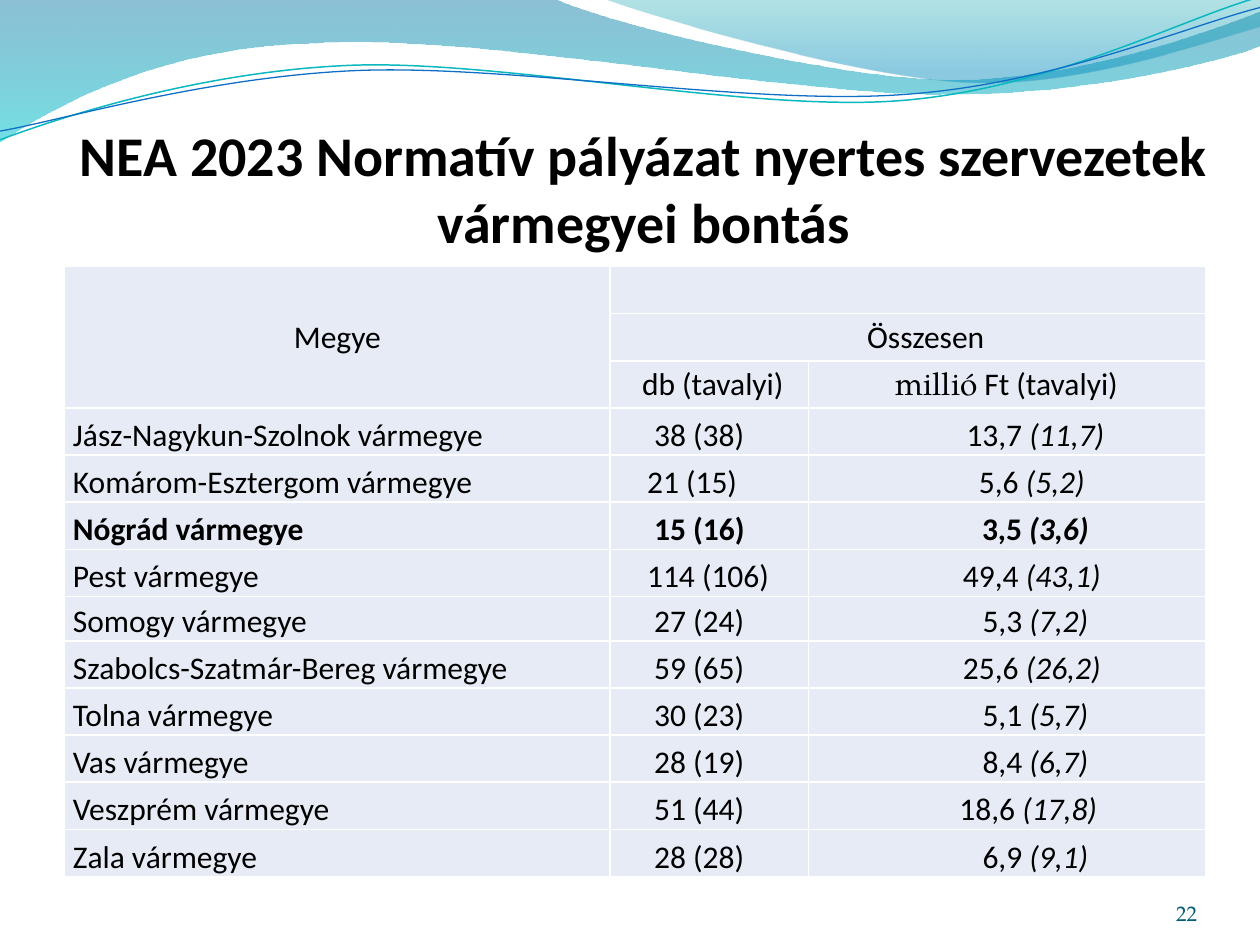
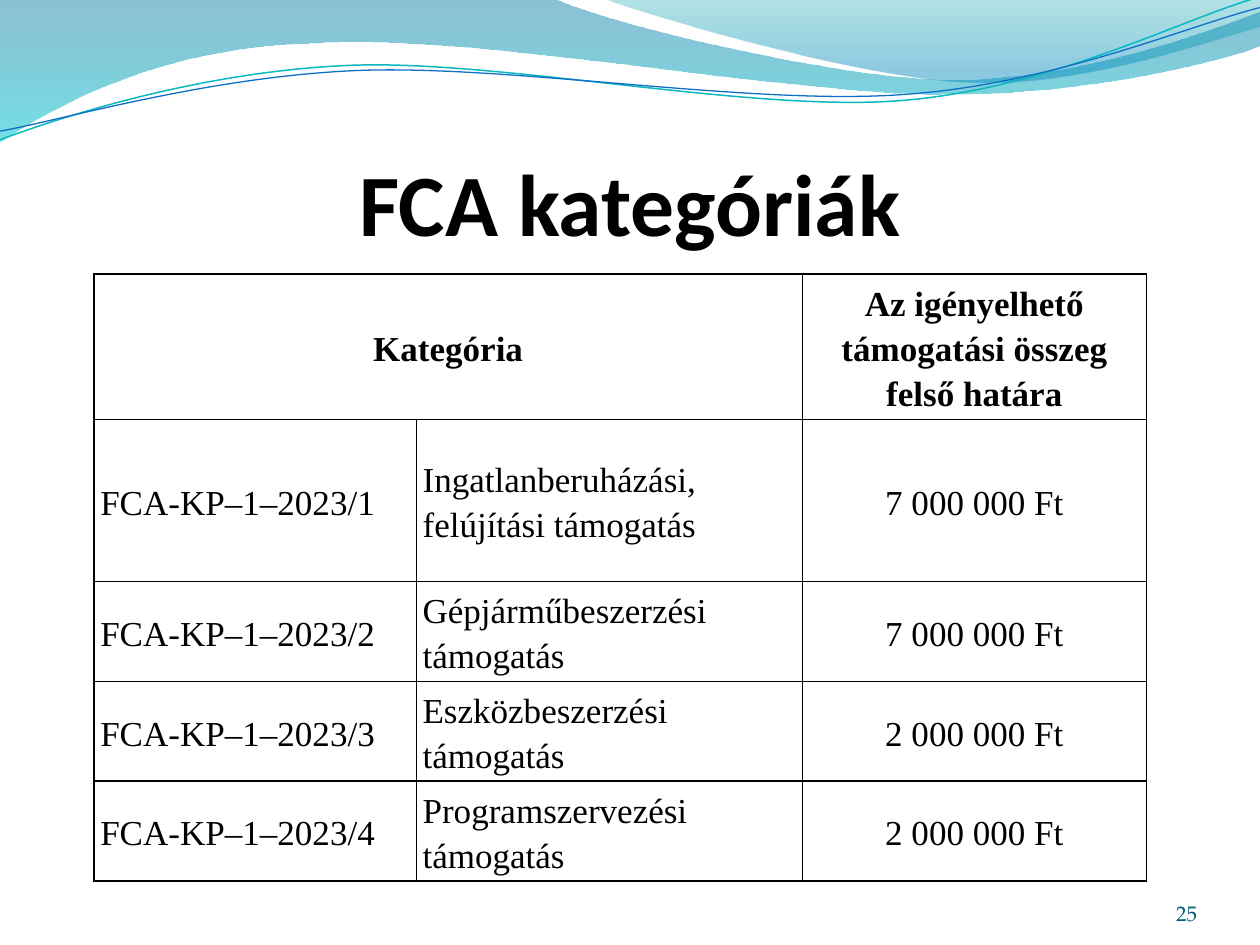
from dataclasses import dataclass

from lxml import etree
from pptx import Presentation
from pptx.dml.color import RGBColor
from pptx.enum.text import MSO_ANCHOR, MSO_AUTO_SIZE, PP_ALIGN
from pptx.oxml.ns import qn
from pptx.util import Pt

LEFT, CENTER, RIGHT = PP_ALIGN.LEFT, PP_ALIGN.CENTER, PP_ALIGN.RIGHT
MIDDLE, BOTTOM = MSO_ANCHOR.MIDDLE, MSO_ANCHOR.BOTTOM
NO_FIT = MSO_AUTO_SIZE.NONE
TITLE_ONLY = 5
SPACE = 4.07

COLORS = {
    "text": "000000",
    "number": "045D75",
    "cell": "E7EBF5",
    "white": "FFFFFF",
    "teal line": "0AB8BF",
    "blue line": "0F6FC6",
}
FONTS = {"sans": "Calibri", "serif": "Times New Roman", "number": "TeX Gyre Pagella"}

WAVES = [
    {
        "start": (0, 0),
        "segments": [
            [(316.8, -0.7)],
            [(342.7, 12.2), (478.1, 45.4), (545.8, 45.4)],
            [(614.2, 45.4), (689.8, 18.7), (720, 6.5)],
            [(720.7, 25.9)],
            [(708.5, 31.7), (626.4, 54.7), (537.1, 54)],
            [(447.8, 54), (275, 20.2), (185, 24.5)],
            [(92.2, 25.9), (33.1, 59.8), (-0.7, 81.4)],
        ],
        "stops": [(0, "0074A1", 45), (1, "00C6CF", 55)],
    },
    {
        "start": (344.9, -0.7),
        "segments": [
            [(366.5, 7.9), (491, 44.6), (553.7, 46.8)],
            [(616.3, 49.7), (691.9, 23), (720, 15.1)],
            [(720, 0)],
        ],
        "stops": [(0, "00A1A9", 30), (0.8, "008BBF", 45)],
    },
    {
        "start": (0, 79.9),
        "segments": [
            [(34.6, 67), (113.8, 41), (199.4, 37.4)],
            [(284.4, 33.8), (427, 64.1), (513.4, 57.6)],
            [(599.8, 51.1), (675.4, 10.8), (718.6, -1.4)],
        ],
        "line": ("teal line", 0.85),
    },
    {
        "start": (0, 74.9),
        "segments": [
            [(33.8, 69.1), (118.1, 43.9), (203.8, 40.3)],
            [(290.2, 36.7), (429.8, 60.5), (516.2, 54)],
            [(601.9, 48.2), (677.5, 15.1), (720, 4.3)],
        ],
        "line": ("blue line", 0.75),
    },
]

COUNTIES = [
    ("Jász-Nagykun-Szolnok", "38 (38)", 6, "13,7", "(11,7)", 8),
    ("Komárom-Esztergom", "21 (15)", 5, "5,6", "(5,2)", 7),
    ("Nógrád", "15 (16)", 6, "3,5", "(3,6)", 8),
    ("Pest", "114 (106)", 5, "49,4", "(43,1)", 7),
    ("Somogy", "27 (24)", 6, "5,3", "(7,2)", 8),
    ("Szabolcs-Szatmár-Bereg", "59 (65)", 6, "25,6", "(26,2)", 7),
    ("Tolna", "30 (23)", 6, "5,1", "(5,7)", 8),
    ("Vas", "28 (19)", 6, "8,4", "(6,7)", 8),
    ("Veszprém", "51 (44)", 6, "18,6", "(17,8)", 6),
    ("Zala", "28 (28)", 6, "6,9", "(9,1)", 8),
]
HOME_COUNTY = "Nógrád"

CATEGORIES = [
    ("Ingatlanberuházási, felújítási támogatás", "7 000 000 Ft"),
    ("Gépjárműbeszerzési támogatás", "7 000 000 Ft"),
    ("Eszközbeszerzési támogatás", "2 000 000 Ft"),
    ("Programszervezési támogatás", "2 000 000 Ft"),
]


def write(para, text, size=18, font="sans", color="text", bold=False, italic=False,
          align=LEFT, spacing=None):
    para.alignment = align
    if spacing:
        para.line_spacing = spacing
    span = para.add_run()
    span.text = text
    span.font.size = Pt(size)
    span.font.name = FONTS[font]
    span.font.bold = bold
    span.font.italic = italic
    span.font.color.rgb = RGBColor.from_string(COLORS[color])


def bend(shape, segments):
    corners = iter(list(shape.element.iter(qn("a:lnTo"))))
    for segment in segments:
        steps = [next(corners) for _ in segment]
        if len(steps) == 3:
            curve = etree.Element(qn("a:cubicBezTo"))
            steps[0].addprevious(curve)
            for step in steps:
                curve.append(step[0])
                step.getparent().remove(step)


def set_insets(target, left, top, right, bottom):
    target.margin_left, target.margin_top = Pt(left), Pt(top)
    target.margin_right, target.margin_bottom = Pt(right), Pt(bottom)


@dataclass
class DeckWriter:
    deck: object
    page: object = None

    def add_page(self, title, size, number, width=648):
        first = self.page is None
        self.page = self.deck.slides.add_slide(self.deck.slide_layouts[TITLE_ONLY])
        if first:
            for index, wave in enumerate(WAVES):
                shape = self.add_wave(**wave)
                shape.element.nvSpPr.cNvPr.set("id", str(101 + index))
                self.deck.slide_master.shapes.element.insert(2 + index, shape.element)
        self.add_title(title, size, width)
        self.add_number(number)

    def add_wave(self, start, segments, stops=None, line=None):
        builder = self.page.shapes.build_freeform(Pt(start[0]), Pt(start[1]))
        points = [(Pt(x), Pt(y)) for segment in segments for x, y in segment]
        builder.add_line_segments(points, close=bool(stops))
        shape = builder.convert_to_shape()
        bend(shape, segments)
        shape.shadow.inherit = False
        if line:
            color, width = line
            shape.fill.background()
            shape.line.color.rgb = RGBColor.from_string(COLORS[color])
            shape.line.width = Pt(width)
            return shape
        shape.line.fill.background()
        shape.fill.gradient()
        shape.fill.gradient_angle = 270
        for stop, (position, color, _) in zip(shape.fill.gradient_stops, stops):
            stop.position = position
            stop.color.rgb = RGBColor.from_string(color)
        tints = list(shape.element.iter(qn("a:srgbClr")))
        for tint, (_, _, opacity) in zip(tints, stops):
            etree.SubElement(tint, qn("a:alpha"), val=str(opacity * 1000))
        return shape

    def add_title(self, text, size, width):
        title = self.page.shapes.title
        title.left, title.top = Pt(36), Pt(55.44)
        title.width, title.height = Pt(width), Pt(90)
        frame = title.text_frame
        frame.auto_size = NO_FIT
        frame.word_wrap = True
        frame.vertical_anchor = BOTTOM
        set_insets(frame, 0, 3.6, 0, 0)
        write(frame.paragraphs[0], text, size=size, bold=True, align=CENTER)

    def add_number(self, number):
        box = self.page.shapes.add_textbox(Pt(624), Pt(500.5), Pt(60), Pt(28.75))
        frame = box.text_frame
        frame.word_wrap = True
        frame.vertical_anchor = BOTTOM
        set_insets(frame, 0, 0, 0, 0)
        write(frame.paragraphs[0], number, size=12, font="number", color="number", align=RIGHT)

    def add_table(self, left, top, widths, heights, border, insets, fill=None):
        frame = self.page.shapes.add_table(
            len(heights), len(widths), Pt(left), Pt(top), Pt(sum(widths)), Pt(sum(heights)))
        table = frame.table
        table.first_row = table.horz_banding = False
        for column, width in zip(table.columns, widths):
            column.width = Pt(width)
        for row, height in zip(table.rows, heights):
            row.height = Pt(height)
        for cell in table.iter_cells():
            set_insets(cell, *insets)
            self.style_cell(cell, border, fill)
        return table

    def style_cell(self, cell, border, fill):
        properties = cell._tc.get_or_add_tcPr()
        for side in ("lnL", "lnR", "lnT", "lnB"):
            edge = etree.SubElement(properties, qn(f"a:{side}"), w=str(Pt(1)))
            paint = etree.SubElement(edge, qn("a:solidFill"))
            etree.SubElement(paint, qn("a:srgbClr"), val=COLORS[border])
        if fill:
            cell.fill.solid()
            cell.fill.fore_color.rgb = RGBColor.from_string(COLORS[fill])
        else:
            cell.fill.background()

    def fill_cell(self, cell, text, anchor=MIDDLE, indent=0, **look):
        cell.margin_left += Pt(indent * SPACE)
        cell.vertical_anchor = anchor
        para = cell.text_frame.paragraphs[0]
        write(para, text, **look)
        return para


def build_counties(writer):
    writer.add_page("NEA 2023 Normatív pályázat nyertes szervezetek vármegyei bontás",
                    32, "22", width=663.84)
    heights = [25.4 if row == 7 else 26.95 for row in range(13)]
    table = writer.add_table(36.9, 152.3, [311.8, 113.2, 227], heights, "white",
                             (0.72, 0.72, 0.72, 0), "cell")
    table.cell(0, 0).merge(table.cell(2, 0))
    for row in (0, 1):
        table.cell(row, 1).merge(table.cell(row, 2))
    writer.fill_cell(table.cell(0, 0), "Megye", align=CENTER)
    writer.fill_cell(table.cell(1, 1), "Összesen", indent=5, align=CENTER)
    writer.fill_cell(table.cell(2, 1), "db (tavalyi)", indent=1, align=CENTER)
    para = writer.fill_cell(table.cell(2, 2), "millió", font="number", align=CENTER)
    write(para, " Ft (tavalyi)", align=CENTER)
    for row, (county, count, count_indent, amount, previous, indent) in enumerate(COUNTIES, 3):
        look = {"bold": county == HOME_COUNTY}
        writer.fill_cell(table.cell(row, 0), f"{county} vármegye", BOTTOM, indent=1, **look)
        writer.fill_cell(table.cell(row, 1), count, BOTTOM, indent=count_indent, **look)
        para = writer.fill_cell(table.cell(row, 2), f"{amount} ", BOTTOM, indent=indent,
                                align=CENTER, **look)
        write(para, previous, italic=True, align=CENTER, **look)


def build_categories(writer):
    writer.add_page("FCA kategóriák", 50, "25")
    table = writer.add_table(53.7, 156.6, [184.2, 220.6, 196.6],
                             [79.2, 92.6, 57.1, 57.1, 57.1], "text", (3.6, 0.1, 3.6, 0.1))
    table.cell(0, 0).merge(table.cell(0, 1))
    look = {"size": 20, "font": "serif", "spacing": 1.15}
    headings = {0: "Kategória", 2: "Az igényelhető támogatási összeg felső határa"}
    for column, heading in headings.items():
        writer.fill_cell(table.cell(0, column), heading, bold=True, align=CENTER, **look)
    for row, (category, limit) in enumerate(CATEGORIES, 1):
        writer.fill_cell(table.cell(row, 0), f"FCA-KP–1–2023/{row}", **look)
        writer.fill_cell(table.cell(row, 1), category, **look)
        writer.fill_cell(table.cell(row, 2), limit, align=CENTER, **look)


def main():
    deck = Presentation()
    deck.slide_width, deck.slide_height = Pt(720), Pt(540)
    writer = DeckWriter(deck)
    build_counties(writer)
    build_categories(writer)
    deck.save("out.pptx")


if __name__ == "__main__":
    main()
